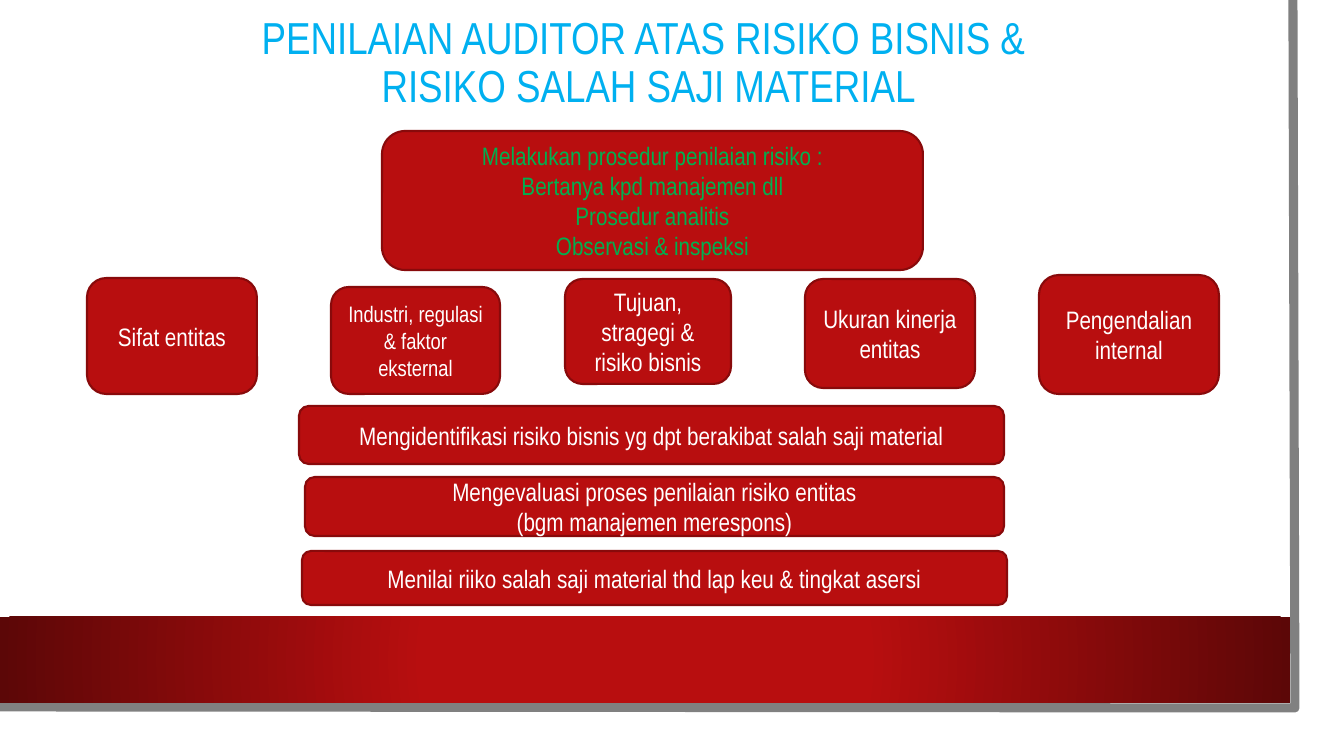
import pptx
import pptx.dml.color
import pptx.enum.shapes
import pptx.enum.text
import pptx.util
from lxml import etree

PX = 914400 / 100.8
FONT = "Arial Narrow"
RED, DARK_RED, WHITE, GREEN = "B80E0F", "880A0B", "FFFFFF", "00B050"
SHAPES = pptx.enum.shapes.MSO_SHAPE


def color(value):
    return pptx.dml.color.RGBColor.from_string(value)


def write(shape, lines, size, ink):
    """Fill a shape with centred paragraphs, anchored in the middle."""
    frame = shape.text_frame
    frame.word_wrap = True
    frame.vertical_anchor = pptx.enum.text.MSO_ANCHOR.MIDDLE
    frame.text = "\n".join(lines)
    for para in frame.paragraphs:
        para.alignment = pptx.enum.text.PP_ALIGN.CENTER
        para.font.name = FONT
        para.font.size = pptx.util.Pt(size)
        para.font.color.rgb = color(ink)


deck = pptx.Presentation()
deck.slide_width = round(1344 * PX)
deck.slide_height = round(756 * PX)
page = deck.slides.add_slide(deck.slide_layouts[6])

# Grey frame along the right and bottom edges
builder = page.shapes.build_freeform(1293, 0, scale=PX)
builder.add_line_segments([(1295, 708), (-3, 707)], close=False)
frame_edge = builder.convert_to_shape()
frame_edge.shadow.inherit = False
frame_edge.fill.background()
frame_edge.line.color.rgb = color("808080")
frame_edge.line.width = pptx.util.Pt(6.5)

# Footer band with a radial gradient
band = page.shapes.add_shape(SHAPES.RECTANGLE, 0, round(617 * PX), round(1290 * PX), round(86 * PX))
band.shadow.inherit = False
band.line.fill.background()
band.fill.gradient()
stops = band.fill.gradient_stops
for stop, position, shade in zip(stops, (0.34, 1), (RED, "5C0707")):
    stop.position = position
    stop.color.rgb = color(shade)
gradient = band._element.spPr.find(pptx.oxml.ns.qn("a:gradFill"))
gradient.remove(gradient.find(pptx.oxml.ns.qn("a:lin")))
radial = etree.SubElement(gradient, pptx.oxml.ns.qn("a:path"), path="circle")
etree.SubElement(radial, pptx.oxml.ns.qn("a:fillToRect"), l="50000", t="50000", r="50000", b="50000")

title = page.shapes.add_textbox(round(76 * PX), round(20 * PX), round(1146 * PX), round(88 * PX))
write(title, ["PENILAIAN AUDITOR ATAS RISIKO BISNIS & \vRISIKO SALAH SAJI MATERIAL"], 32, "00B0F0")
title.text_frame.paragraphs[0].line_spacing = 0.9

# left, top, width, height, font size, text colour, lines
boxes = [
    (382, 131, 541, 139, 18, GREEN, ["Melakukan prosedur penilaian risiko :", "Bertanya kpd manajemen dll",
                                     "Prosedur analitis", "Observasi & inspeksi"]),
    (87, 278, 170, 116, 18, WHITE, ["Sifat entitas"]),
    (331, 287, 169, 107, 16, WHITE, ["Industri, regulasi & faktor eksternal"]),
    (565, 279, 166, 105, 18, WHITE, ["Tujuan, stragegi & risiko bisnis"]),
    (805, 279, 170, 109, 18, WHITE, ["Ukuran kinerja entitas"]),
    (1039, 275, 180, 119, 18, WHITE, ["Pengendalian internal"]),
    (299, 406, 705, 58, 18, WHITE, ["Mengidentifikasi risiko bisnis yg dpt berakibat salah saji material"]),
    (305, 477, 699, 59, 18, WHITE, ["Mengevaluasi proses penilaian risiko entitas",
                                    "(bgm manajemen merespons)"]),
    (302, 551, 705, 54, 18, WHITE, ["Menilai riiko salah saji material thd lap keu & tingkat asersi"]),
]
for left, top, width, height, size, ink, lines in boxes:
    box = page.shapes.add_shape(SHAPES.ROUNDED_RECTANGLE,
                                *(round(length * PX) for length in (left, top, width, height)))
    box.shadow.inherit = False
    box.fill.solid()
    box.fill.fore_color.rgb = color(RED)
    box.line.color.rgb = color(DARK_RED)
    box.line.width = pptx.util.Pt(1.5)
    write(box, lines, size, ink)

deck.save("out.pptx")
